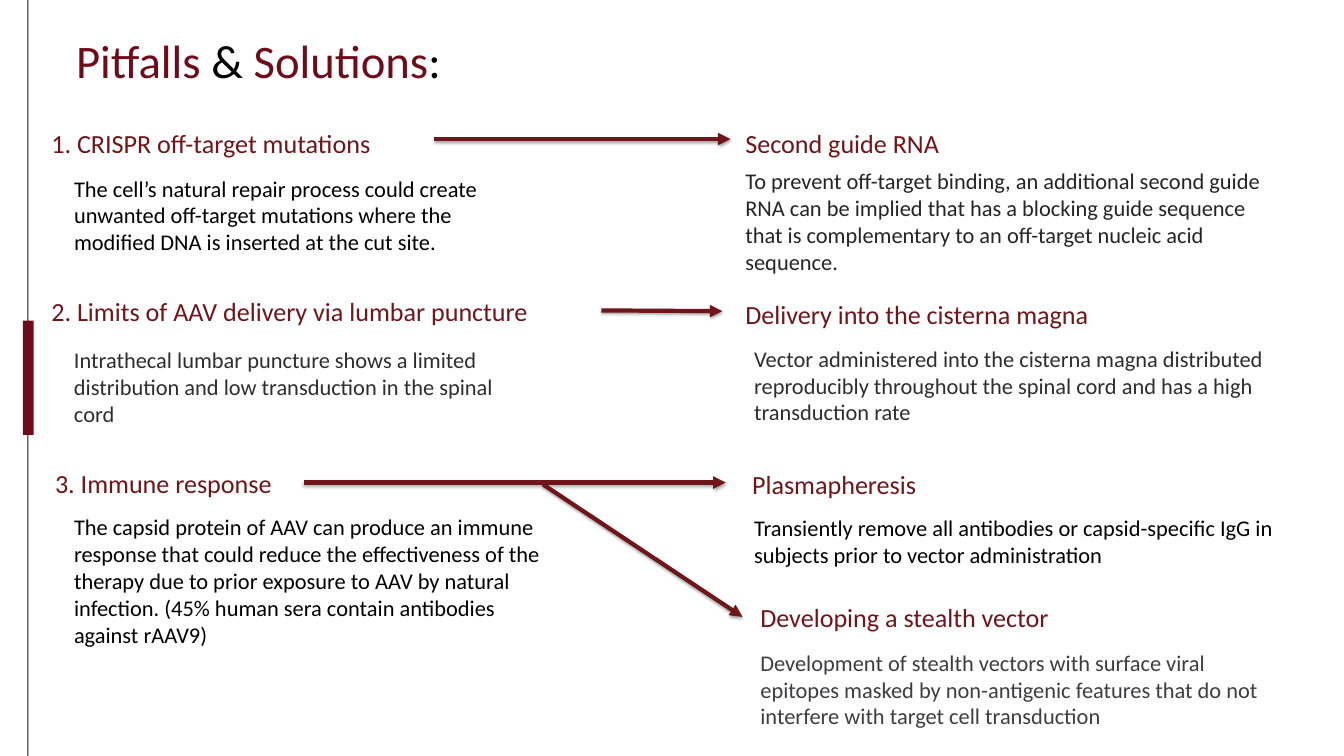
import pptx
import pptx.util
import pptx.dml.color
import pptx.enum.shapes
import pptx.enum.text
import pptx.oxml
from lxml import etree

Pt = pptx.util.Pt
Anchor = pptx.enum.text.MSO_ANCHOR
COLOURS = {
    "heading": "70151A",
    "accent": "700C1A",
    "rule": "141414",
    "black": "000000",
    "dark": "252525",
    "soft": "2E2E2E",
    "grey": "3E3D40",
}
SHADOW = (
    '<a:effectLst xmlns:a="http://schemas.openxmlformats.org/drawingml/2006/main">'
    '<a:outerShdw blurRad="39370" dist="22860" dir="5400000" rotWithShape="0">'
    '<a:srgbClr val="000000"><a:alpha val="35000"/></a:srgbClr>'
    '</a:outerShdw></a:effectLst>'
)


class SlideWriter:
    def __init__(self, page, font="Calibri"):
        self.page = page
        self.font = font

    def colour(self, name):
        return pptx.dml.color.RGBColor.from_string(COLOURS[name])

    def frame(self, left, top, width, height, inset, anchor):
        box = self.page.shapes.add_textbox(Pt(left), Pt(top), Pt(width), Pt(height))
        frame = box.text_frame
        frame.word_wrap = True
        frame.vertical_anchor = anchor
        frame.margin_left = frame.margin_right = Pt(inset)
        frame.margin_top = frame.margin_bottom = Pt(inset)
        return frame

    def text(self, words, left, top, width, height, size, colour, inset=3):
        para = self.frame(left, top, width, height, inset, Anchor.MIDDLE).paragraphs[0]
        para.text = words
        para.font.name = self.font
        para.font.size = Pt(size)
        para.font.color.rgb = self.colour(colour)

    def heading(self, words, left, top, width, inset=3):
        self.text(words, left, top, width, 40.5, 28, "heading", inset)

    def body(self, words, left, top, width, height, colour, inset=3):
        self.text(words, left, top, width, height, 24, colour, inset)

    def title(self, spans, left, top, width, height):
        para = self.frame(left, top, width, height, 0, Anchor.TOP).paragraphs[0]
        para.alignment = pptx.enum.text.PP_ALIGN.CENTER
        para.line_spacing = Pt(70)
        para.font.name = self.font
        para.font.size = Pt(50)
        for words, colour in spans:
            span = para.add_run()
            span.text = words
            span.font.color.rgb = self.colour(colour)

    def bar(self, left, top, width, height, colour):
        kind = pptx.enum.shapes.MSO_SHAPE.RECTANGLE
        bar = self.page.shapes.add_shape(kind, Pt(left), Pt(top), Pt(width), Pt(height))
        bar.shadow.inherit = False
        bar.fill.solid()
        bar.fill.fore_color.rgb = self.colour(colour)
        bar.line.fill.background()

    def arrow(self, start_x, start_y, end_x, end_y):
        kind = pptx.enum.shapes.MSO_CONNECTOR.STRAIGHT
        arrow = self.page.shapes.add_connector(
            kind, Pt(start_x), Pt(start_y), Pt(end_x), Pt(end_y))
        arrow.line.width = Pt(4.5)
        arrow.line.color.rgb = self.colour("heading")
        line = arrow.line._get_or_add_ln()
        etree.SubElement(line, pptx.oxml.ns.qn("a:tailEnd"), type="triangle")
        arrow._element.spPr.append(pptx.oxml.parse_xml(SHADOW))


def main():
    deck = pptx.Presentation()
    deck.slide_width, deck.slide_height = Pt(1440), Pt(810)
    writer = SlideWriter(deck.slides.add_slide(deck.slide_layouts[6]))

    writer.bar(29.3, 0, 1, 810, "rule")
    writer.bar(24.5, 343.5, 11.5, 122.4, "accent")
    writer.title([("Pitfalls ", "accent"), ("&", "black"),
                  (" Solutions", "accent"), (":", "black")], 31, 23.8, 492, 67.7)

    headings = [
        ("1. CRISPR off-target mutations", 52, 133, 395, 3),
        ("2. Limits of AAV delivery via lumbar puncture", 52, 313.2, 583, 3),
        ("3. Immune response", 52, 497, 274, 7),
        ("Second guide RNA", 795.6, 132.5, 284, 3),
        ("Delivery into the cisterna magna", 795.6, 316, 428, 3),
        ("Plasmapheresis", 802.8, 498.2, 205, 3),
        ("Developing a stealth vector", 810.7, 640.5, 374, 4),
    ]
    for heading in headings:
        writer.heading(*heading)

    bodies = [
        ("The cell’s natural repair process could create unwanted off-target mutations "
         "where the modified DNA is inserted at the cut site.",
         76.3, 183.6, 492, 93.6, "black"),
        ("Intrathecal lumbar puncture shows a limited distribution and low transduction "
         "in the spinal cord", 76.3, 367.2, 488, 93.6, "soft"),
        ("The capsid protein of AAV can produce an immune response that could reduce the "
         "effectiveness of the therapy due to prior exposure to AAV by natural infection. "
         "(45% human sera contain antibodies against rAAV9)",
         76.3, 546.5, 507.6, 151.2, "black"),
        ("To prevent off-target binding, an additional second guide RNA can be implied "
         "that has a blocking guide sequence that is complementary to an off-target "
         "nucleic acid sequence.", 795.6, 175.7, 573, 122.4, "dark"),
        ("Vector administered into the cisterna magna distributed reproducibly throughout "
         "the spinal cord and has a high transduction rate",
         805, 365.8, 564, 93.6, "soft"),
        ("Transiently remove all antibodies or capsid-specific IgG in subjects prior to "
         "vector administration", 805, 548, 573, 64, "black"),
        ("Development of stealth vectors with surface viral epitopes masked by "
         "non-antigenic features that do not interfere with target cell transduction",
         810.7, 689, 558.7, 98.6, "grey", 4),
    ]
    for body in bodies:
        writer.body(*body)

    arrows = [
        (465, 149, 782.6, 149),
        (644.4, 332.6, 774, 333.4),
        (325.4, 517, 777.6, 517),
        (581.8, 519, 795.6, 661),
    ]
    for arrow in arrows:
        writer.arrow(*arrow)

    deck.save("out.pptx")


if __name__ == "__main__":
    main()
